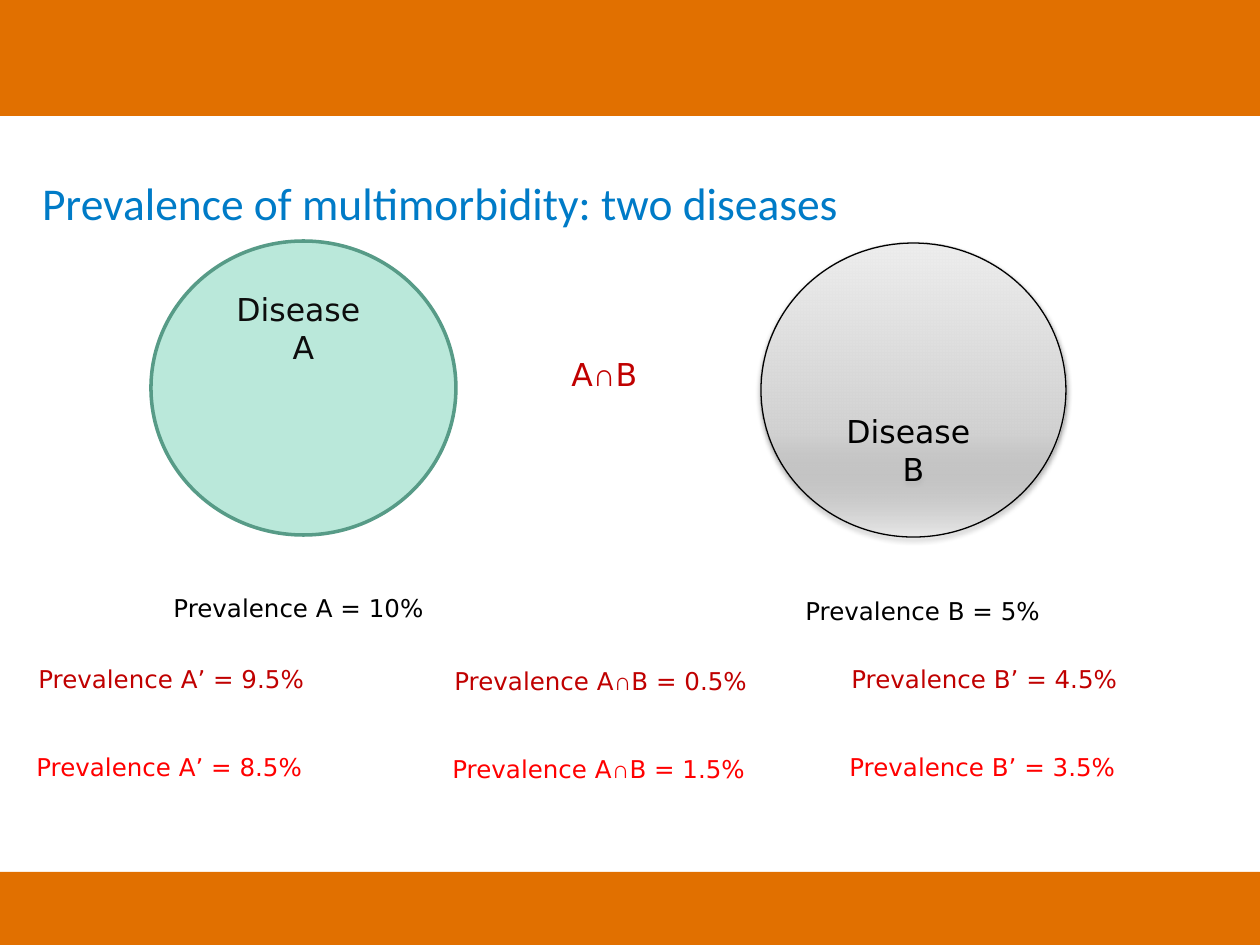
from dataclasses import dataclass

from lxml import etree
from pptx import Presentation
from pptx.dml.color import RGBColor
from pptx.enum.shapes import MSO_SHAPE as Shape
from pptx.enum.text import MSO_ANCHOR as Anchor, MSO_AUTO_SIZE as AutoSize, PP_ALIGN as Align
from pptx.oxml import parse_xml
from pptx.oxml.ns import nsdecls, qn
from pptx.util import Pt

EMU_PER_PX = 914400 / 126
TITLE_ONLY = 5


@dataclass(frozen=True)
class Theme:
    orange: str = "E17000"
    blue: str = "007BC7"
    mint: str = "76D2B6"
    green: str = "579B87"
    black: str = "000000"
    ink: str = "0D0D0D"
    dark_red: str = "C00000"
    red: str = "FF0000"
    # position, colour, opacity; all in percent
    grays: tuple = ((0, "BDBDBD", 12), (35, "D1D1D1", 100), (100, "EEEEEE", 100))
    title_font: str = "Calibri"
    body_font: str = "DejaVu Sans"
    symbol_font: str = "Arial"
    title_size: int = 26
    label_size: int = 18
    note_size: int = 14


def px(*lengths):
    return [round(length * EMU_PER_PX) for length in lengths]


def write_text(frame, text, *, size, color, font, symbol_font=None, align=Align.LEFT):
    """Fill a frame; each line is a paragraph, and ∩ takes the symbol font."""
    for number, line in enumerate(text.split("\n")):
        para = frame.paragraphs[0] if number == 0 else frame.add_paragraph()
        para.alignment = align
        for piece in line.replace("∩", "|∩|").split("|"):
            span = para.add_run()
            span.text = piece
            span.font.size = Pt(size)
            span.font.name = symbol_font if piece == "∩" else font
            span.font.color.rgb = RGBColor.from_string(color)


class SlideBuilder:
    def __init__(self, slide, theme):
        self.slide = slide
        self.theme = theme

    def title(self, text, left, top, width, height):
        box = self.slide.shapes.title
        box.left, box.top, box.width, box.height = px(left, top, width, height)
        frame = box.text_frame
        frame.margin_left = frame.margin_right = frame.margin_top = frame.margin_bottom = 0
        frame.vertical_anchor = Anchor.BOTTOM
        frame.auto_size = AutoSize.NONE
        frame.word_wrap = True
        write_text(frame, text, size=self.theme.title_size, color=self.theme.blue,
                   font=self.theme.title_font)

    def shape(self, kind, left, top, width, height, fill=None):
        item = self.slide.shapes.add_shape(kind, *px(left, top, width, height))
        item.shadow.inherit = False
        item.line.fill.background()
        if fill:
            item.fill.solid()
            item.fill.fore_color.rgb = RGBColor.from_string(fill)
        return item

    def bar(self, top, height):
        self.shape(Shape.RECTANGLE, 0, top, 1264, height, self.theme.orange)

    def circle(self, text, left, top, *, line, line_width, color, anchor, fill=None):
        circle = self.shape(Shape.OVAL, left, top, 305, 294, fill)
        circle.line.color.rgb = RGBColor.from_string(line)
        circle.line.width = Pt(line_width)
        frame = circle.text_frame
        frame.word_wrap = True
        frame.vertical_anchor = anchor
        write_text(frame, text, size=self.theme.label_size, color=color,
                   font=self.theme.body_font, align=Align.CENTER)
        return circle

    def label(self, text, left, top, width, height, *, size, color):
        box = self.slide.shapes.add_textbox(*px(left, top, width, height))
        box.text_frame.word_wrap = False
        box.text_frame.auto_size = AutoSize.SHAPE_TO_FIT_TEXT
        write_text(box.text_frame, text, size=size, color=color,
                   font=self.theme.body_font, symbol_font=self.theme.symbol_font)

    def note(self, text, left, top, width, color):
        self.label(text, left, top, width, 43, size=self.theme.note_size, color=color)

    def fade_upward(self, shape, stops):
        """Gradient from the bottom edge to the top edge."""
        stop_xml = "".join(
            f'<a:gs pos="{position * 1000}"><a:srgbClr val="{color}">'
            f'<a:alpha val="{opacity * 1000}"/></a:srgbClr></a:gs>'
            for position, color, opacity in stops)
        gradient = parse_xml(
            f'<a:gradFill {nsdecls("a")} rotWithShape="1"><a:gsLst>{stop_xml}</a:gsLst>'
            '<a:lin ang="16200000" scaled="0"/></a:gradFill>')
        shape._element.spPr.find(qn("a:prstGeom")).addnext(gradient)

    def drop_shadow(self, shape, color):
        effects = shape._element.spPr.find(qn("a:effectLst"))
        effects.append(parse_xml(
            f'<a:outerShdw {nsdecls("a")} blurRad="40000" dist="20000" dir="5400000" '
            f'rotWithShape="0"><a:srgbClr val="{color}"><a:alpha val="38000"/>'
            '</a:srgbClr></a:outerShdw>'))

    def set_opacity(self, shape, percent):
        color = shape._element.spPr.find(qn("a:solidFill")).find(qn("a:srgbClr"))
        etree.SubElement(color, qn("a:alpha"), val=str(percent * 1000))


def main():
    theme = Theme()
    deck = Presentation()
    deck.slide_width, deck.slide_height = px(1260, 945)
    builder = SlideBuilder(deck.slides.add_slide(deck.slide_layouts[TITLE_ONLY]), theme)

    # Frame and title
    builder.bar(872, 73)
    builder.bar(0, 116)
    builder.title("Prevalence of multimorbidity: two diseases", 42, 168, 1126, 62)

    # The two diseases and their overlap
    disease_b = builder.circle("Disease \nB", 761, 243, line=theme.black, line_width=0.75,
                               color=theme.black, anchor=Anchor.BOTTOM)
    builder.fade_upward(disease_b, theme.grays)
    builder.drop_shadow(disease_b, theme.black)
    disease_a = builder.circle("Disease \nA", 151, 241, line=theme.green, line_width=2,
                               color=theme.ink, anchor=Anchor.TOP, fill=theme.mint)
    builder.set_opacity(disease_a, 50)
    builder.label("A∩B", 559, 349, 92, 50, size=theme.label_size, color=theme.dark_red)

    # Total prevalence
    builder.note("Prevalence A = 10%", 161, 587, 281, theme.black)
    builder.note("Prevalence B = 5%", 793, 590, 266, theme.black)

    # Two scenarios: A only, both, B only
    scenarios = (
        (26, 658, theme.dark_red, ("9.5%", "0.5%", "4.5%")),
        (24, 746, theme.red, ("8.5%", "1.5%", "3.5%")),
    )
    columns = (("A’", 0, 0, 301), ("A∩B", 416, 2, 383), ("B’", 813, 0, 296))
    for left, top, color, values in scenarios:
        for (name, shift, drop, width), value in zip(columns, values):
            builder.note(f"Prevalence {name} = {value}", left + shift, top + drop, width, color)

    deck.save("out.pptx")


if __name__ == "__main__":
    main()
